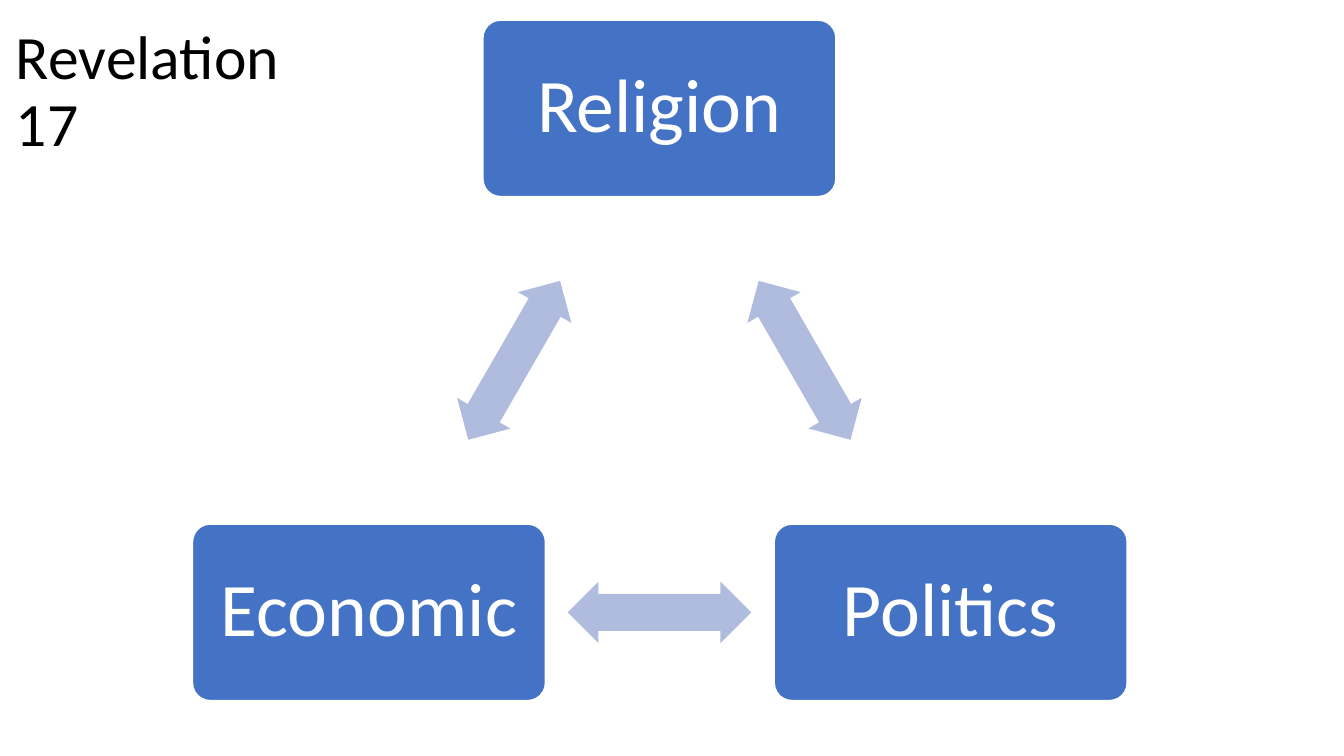
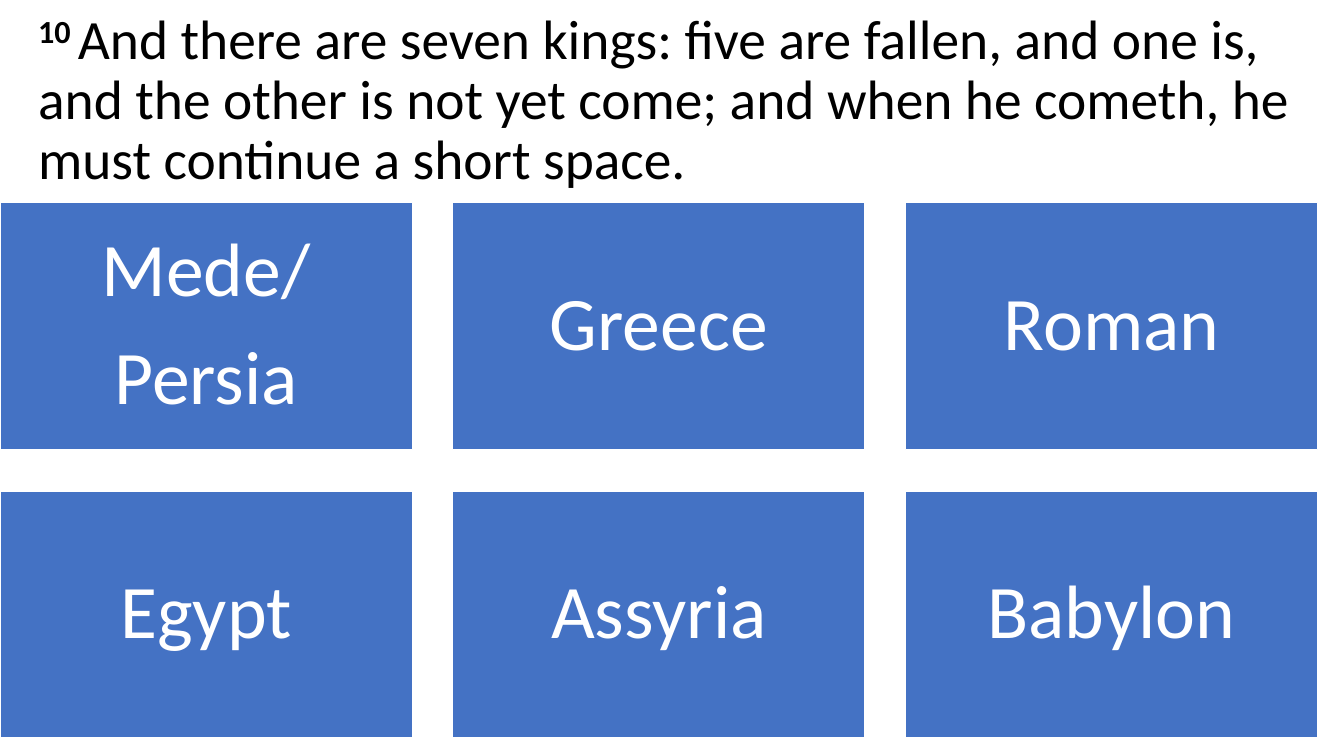
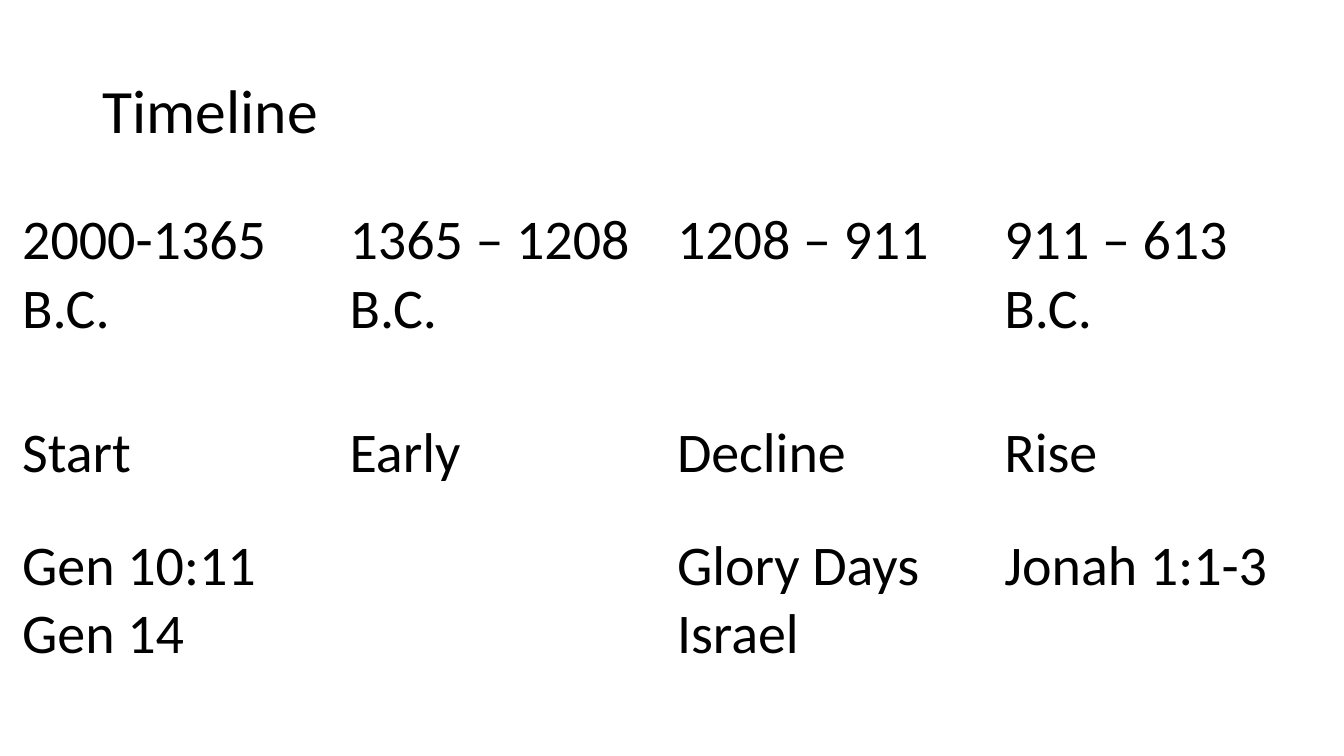
"""Build three slides: a power triangle, a grid of kingdoms and a timeline table."""
from pptx import Presentation
from pptx.dml.color import RGBColor
from pptx.enum.shapes import MSO_SHAPE
from pptx.enum.text import MSO_ANCHOR, PP_ALIGN
from pptx.util import Pt

PX = 9144
FONT = "Calibri"
BLACK, WHITE, BLUE, PALE_BLUE = "000000", "FFFFFF", "4472C4", "B0BCDE"
ROUNDED, RECTANGLE = MSO_SHAPE.ROUNDED_RECTANGLE, MSO_SHAPE.RECTANGLE
DOUBLE_ARROW = MSO_SHAPE.LEFT_RIGHT_ARROW
MIDDLE, CENTER, LEFT = MSO_ANCHOR.MIDDLE, PP_ALIGN.CENTER, PP_ALIGN.LEFT


def write(frame, lines, size, color, align=LEFT, spacing=1.0, after=0):
    """Fill a text frame with paragraphs, each a list of (text, superscript) runs."""
    frame.word_wrap = True
    for index, line in enumerate(lines):
        para = frame.paragraphs[0] if index == 0 else frame.add_paragraph()
        para.alignment = align
        para.line_spacing = spacing
        para.space_after = Pt(after)
        for text, raised in line:
            span = para.add_run()
            span.text = text
            span.font.name = FONT
            span.font.size = Pt(size)
            span.font.bold = raised
            span.font.color.rgb = RGBColor.from_string(color)
            if raised:
                span.font._element.set("baseline", "30000")


def add_block(page, kind, left, top, width, height, fill, label=()):
    """Add a filled shape with an optional centred label."""
    box = page.shapes.add_shape(kind, left * PX, top * PX, width * PX, height * PX)
    box.shadow.inherit = False
    box.fill.solid()
    box.fill.fore_color.rgb = RGBColor.from_string(fill)
    if not label:
        box.line.fill.background()
        return box
    box.line.color.rgb = RGBColor.from_string(WHITE)
    box.line.width = Pt(1)
    frame = box.text_frame
    frame.margin_left = frame.margin_right = 15 * PX
    frame.margin_top = frame.margin_bottom = 23 * PX
    frame.vertical_anchor = MIDDLE
    write(frame, [[(text, False)] for text in label], 54, WHITE, CENTER, 0.9, 19)
    return box


deck = Presentation()
deck.slide_width, deck.slide_height = 1333 * PX, 750 * PX

verse = (
    "And there are seven kings: five are fallen, and one is, and the other is not "
    "yet come; and when he cometh, he must continue a short space."
)
titles = [
    ((6, 20, 352, 145), 44, [("Revelation 17", False)]),
    ((28, 17, 1280, 168), 39.6, [("10 ", True), (verse, False)]),
    ((92, 40, 1150, 145), 44, [("Timeline", False)]),
]
pages = []
for bounds, size, runs in titles:
    page = deck.slides.add_slide(deck.slide_layouts[6])
    title = page.shapes.add_textbox(*[length * PX for length in bounds])
    title.text_frame.vertical_anchor = MIDDLE
    write(title.text_frame, [runs], size, BLACK, spacing=0.9)
    pages.append(page)
triangle_page, kingdom_page, timeline_page = pages

node_width, node_height = 350, 175
arrow_width, arrow_height = 182, 61
nodes = [("Religion", 479, 20), ("Politics", 768, 520), ("Economic", 191, 520)]
for index, (name, left, top) in enumerate(nodes):
    node = add_block(triangle_page, ROUNDED, left, top, node_width, node_height, BLUE, [name])
    node.adjustments[0] = 0.1
    following, next_left, next_top = nodes[(index + 1) % len(nodes)]
    arrow_left = (left + next_left + node_width - arrow_width) // 2
    arrow_top = (top + next_top + node_height - arrow_height) // 2
    arrow = add_block(
        triangle_page, DOUBLE_ARROW, arrow_left, arrow_top, arrow_width, arrow_height, PALE_BLUE
    )
    arrow.adjustments[0] = 0.6
    arrow.rotation = 60 + 120 * index

kingdoms = [
    [["Mede/", "Persia"], ["Greece"], ["Roman"]],
    [["Egypt"], ["Assyria"], ["Babylon"]],
]
for row, names in enumerate(kingdoms):
    for column, name in enumerate(names):
        add_block(
            kingdom_page, RECTANGLE, 449 * column, 201 + 286 * row, 409, 245, BLUE, name
        )

periods = [
    [["2000-1365 B.C."], ["1365 – 1208 B.C."], ["1208 – 911"], ["911 – 613 B.C."]],
    [["Start"], ["Early"], ["Decline"], ["Rise"]],
    [["Gen 10:11", "Gen 14"], [], ["Glory Days", "Israel"], ["Jonah 1:1-3"]],
]
row_heights = [211, 112, 211]
timeline = timeline_page.shapes.add_table(
    3, 4, 12 * PX, 200 * PX, 1299 * PX, sum(row_heights) * PX
).table
timeline.first_row = False
timeline.horz_banding = False
for row, (height, entries) in enumerate(zip(row_heights, periods)):
    timeline.rows[row].height = height * PX
    for column, lines in enumerate(entries):
        cell = timeline.cell(row, column)
        cell.fill.background()
        write(cell.text_frame, [[(text, False)] for text in lines], 40, BLACK)

deck.save("out.pptx")
